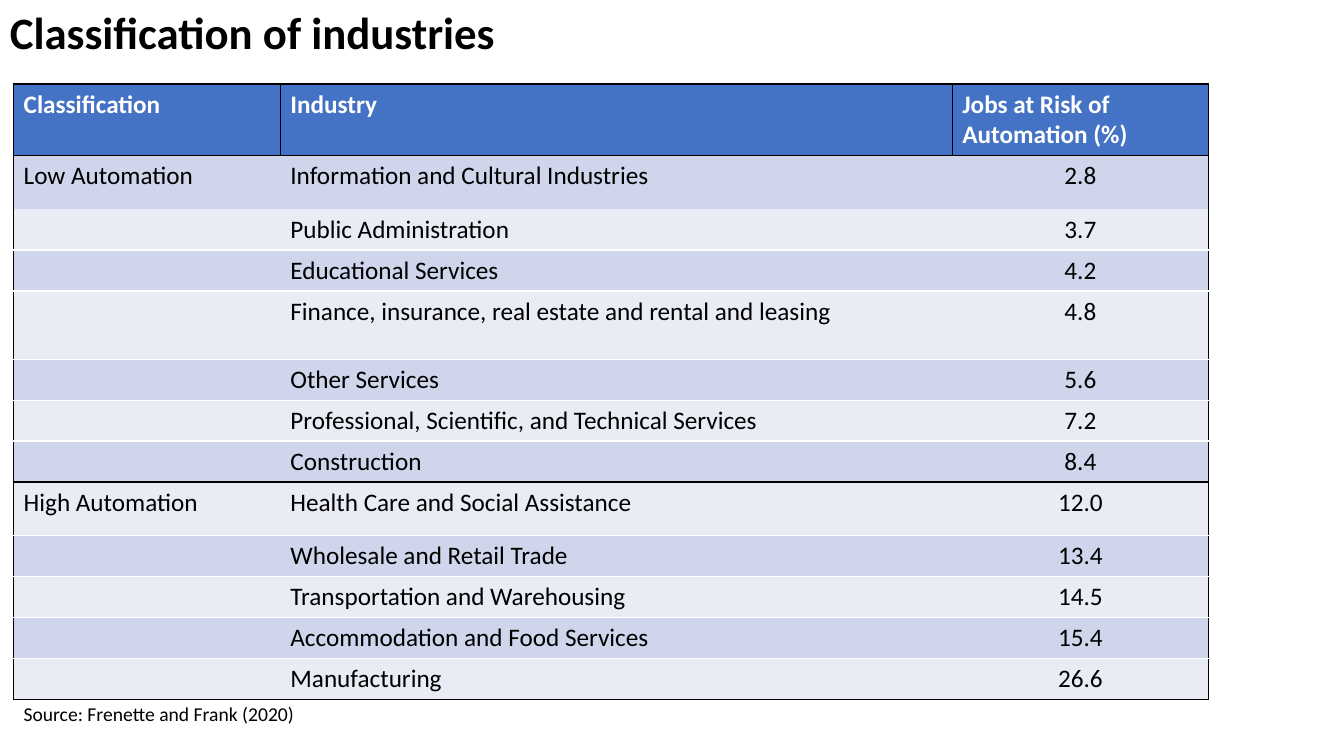
import dataclasses

import lxml.etree
import pptx
import pptx.dml.color
import pptx.enum.text
import pptx.oxml.ns
import pptx.util

PIXEL = 9525
SLIDE_SIZE = (1280, 720)


@dataclasses.dataclass(frozen=True)
class Theme:
    font: str = "Calibri"
    black: str = "000000"
    white: str = "FFFFFF"
    header: str = "4472C4"
    bands: tuple = ("CFD5EA", "E9EBF5")
    title_size: int = 32
    table_size: int = 18
    source_size: int = 14
    border_width: int = 1


THEME = Theme()

HEADINGS = ("Classification", "Industry", "Jobs at Risk of Automation (%)")
COLUMN_WIDTHS = (254, 640, 244)
HEADER_HEIGHT = 68
REGULAR, LEADING, TALL = 39, 51, 65
INDUSTRY_GROUPS = {
    "Low Automation": (
        ("Information and Cultural Industries", "2.8", LEADING),
        ("Public Administration", "3.7", REGULAR),
        ("Educational Services", "4.2", REGULAR),
        ("Finance, insurance, real estate and rental and leasing", "4.8", TALL),
        ("Other Services", "5.6", REGULAR),
        ("Professional, Scientific, and Technical Services", "7.2", REGULAR),
        ("Construction", "8.4", REGULAR),
    ),
    "High Automation": (
        ("Health Care and Social Assistance", "12.0", LEADING),
        ("Wholesale and Retail Trade", "13.4", REGULAR),
        ("Transportation and Warehousing", "14.5", REGULAR),
        ("Accommodation and Food Services", "15.4", REGULAR),
        ("Manufacturing", "26.6", REGULAR),
    ),
}


def px(length):
    return pptx.util.Emu(length * PIXEL)


def rgb(color):
    return pptx.dml.color.RGBColor.from_string(color)


def write_text(frame, text, size, color=THEME.black, bold=False, centered=False):
    paragraph = frame.paragraphs[0]
    if centered:
        paragraph.alignment = pptx.enum.text.PP_ALIGN.CENTER
    run = paragraph.add_run()
    run.text = text
    run.font.name = THEME.font
    run.font.size = pptx.util.Pt(size)
    run.font.bold = bold
    run.font.color.rgb = rgb(color)


def add_text_box(slide, box, text, wrap=True, **text_format):
    frame = slide.shapes.add_textbox(*map(px, box)).text_frame
    frame.word_wrap = wrap
    frame.auto_size = pptx.enum.text.MSO_AUTO_SIZE.SHAPE_TO_FIT_TEXT
    write_text(frame, text, **text_format)


def set_borders(cell, **colors):
    properties = cell._tc.get_or_add_tcPr()
    for side in "LRTB":
        line = lxml.etree.SubElement(properties, pptx.oxml.ns.qn(f"a:ln{side}"))
        line.set("w", str(pptx.util.Pt(THEME.border_width)))
        color = colors.get(side)
        fill_tag = "a:solidFill" if color else "a:noFill"
        fill = lxml.etree.SubElement(line, pptx.oxml.ns.qn(fill_tag))
        if color:
            lxml.etree.SubElement(fill, pptx.oxml.ns.qn("a:srgbClr")).set("val", color)


def fill_cell(cell, fill, borders, text, **text_format):
    set_borders(cell, **borders)
    cell.fill.solid()
    cell.fill.fore_color.rgb = rgb(fill)
    if text:
        write_text(cell.text_frame, text, size=THEME.table_size, **text_format)


def row_edges(group_index, position, group_length):
    top = bottom = THEME.white
    if position == 0:
        top = THEME.black
    if position == group_length - 1:
        bottom = THEME.black
    if group_index == 0 and position == 0:
        bottom = None
    if group_index == 0 and position == 1:
        top = None
    return top, bottom


def add_industry_table(slide, left, top):
    heights = [HEADER_HEIGHT]
    for industries in INDUSTRY_GROUPS.values():
        heights += [height for _, _, height in industries]
    box = (left, top, sum(COLUMN_WIDTHS), sum(heights))
    table = slide.shapes.add_table(len(heights), len(HEADINGS), *map(px, box)).table
    for column, width in zip(table.columns, COLUMN_WIDTHS):
        column.width = px(width)
    for row, height in zip(table.rows, heights):
        row.height = px(height)

    for column, heading in enumerate(HEADINGS):
        borders = dict.fromkeys("LRTB", THEME.black)
        fill_cell(table.cell(0, column), THEME.header, borders, heading,
                  color=THEME.white, bold=True)

    row = 1
    last_column = len(HEADINGS) - 1
    for group_index, (group, industries) in enumerate(INDUSTRY_GROUPS.items()):
        for position, (industry, risk, _) in enumerate(industries):
            top_edge, bottom_edge = row_edges(group_index, position, len(industries))
            label = group if position == 0 else ""
            for column, text in enumerate((label, industry, risk)):
                borders = {"T": top_edge, "B": bottom_edge}
                if column == 0:
                    borders["L"] = THEME.black
                if column == last_column:
                    borders["R"] = THEME.black
                fill_cell(table.cell(row, column), THEME.bands[(row - 1) % 2],
                          borders, text, centered=column == last_column)
            row += 1


def add_industry_slide(presentation):
    slide = presentation.slides.add_slide(presentation.slide_layouts[6])
    add_industry_table(slide, 13, 80)
    add_text_box(slide, (13, 664, 279, 33), "Source: Frenette and Frank (2020)",
                 wrap=False, size=THEME.source_size)
    add_text_box(slide, (0, 0, 590, 61), "Classification of industries",
                 size=THEME.title_size, bold=True)


def main():
    presentation = pptx.Presentation()
    presentation.slide_width, presentation.slide_height = map(px, SLIDE_SIZE)
    add_industry_slide(presentation)
    presentation.save("out.pptx")


if __name__ == "__main__":
    main()
